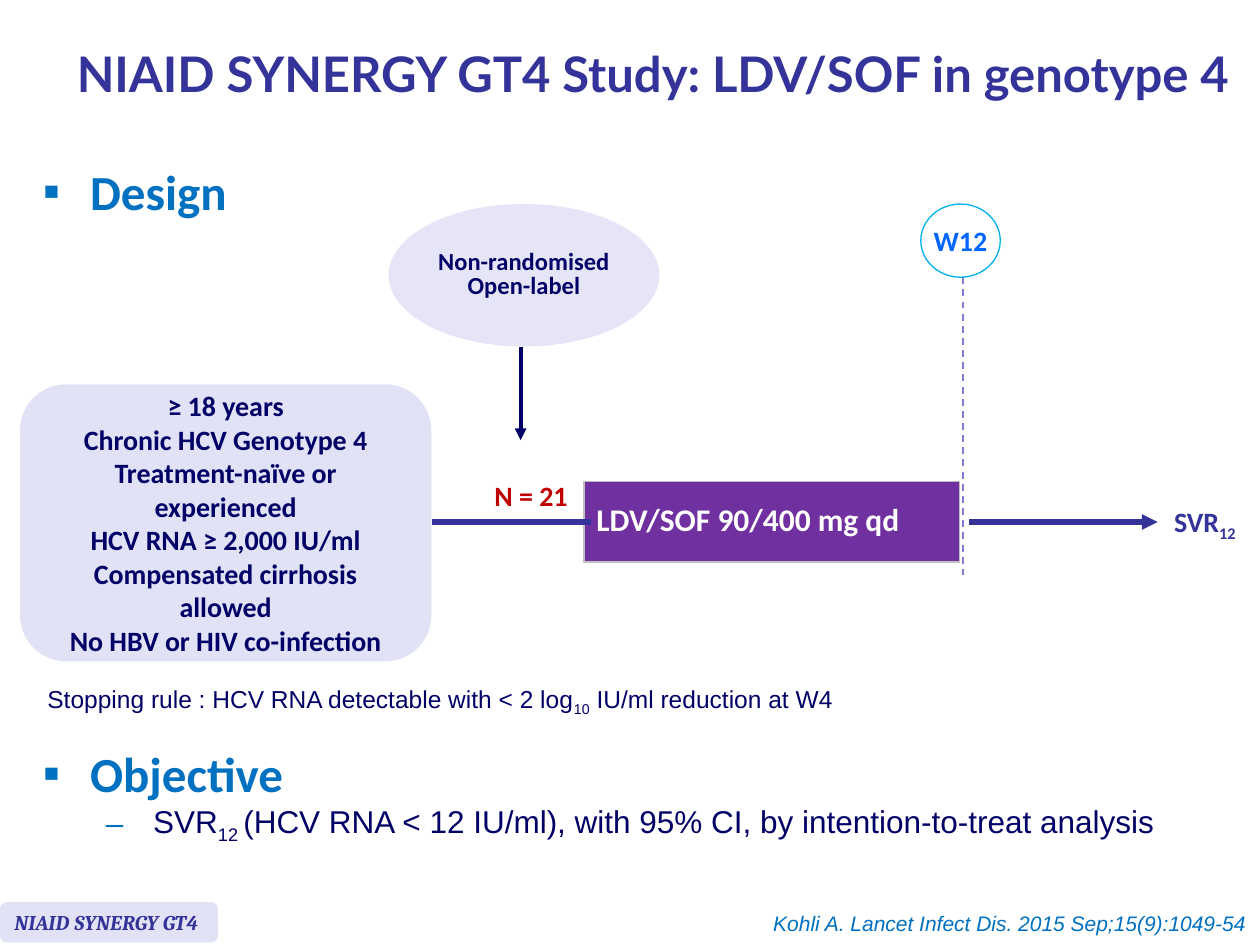
from typing import NamedTuple, Optional

from lxml.etree import SubElement as Sub
from pptx import Presentation
from pptx.dml.color import RGBColor as Color
from pptx.enum.dml import MSO_LINE as Dash
from pptx.enum.shapes import MSO_CONNECTOR as Link, MSO_SHAPE as Kind
from pptx.enum.text import MSO_ANCHOR as Anchor, MSO_AUTO_SIZE as Fit, PP_ALIGN as Align
from pptx.oxml.ns import qn
from pptx.util import Pt

NAVY, INDIGO, BLUE = "000066", "333399", "0070C0"
PALE, WHITE = "E2E2F6", "FFFFFF"


class Box(NamedTuple):
    left: float
    top: float
    width: float
    height: float


class Node(NamedTuple):
    kind: Kind
    box: Box
    fill: str
    text: str
    look: dict
    edge: Optional[str] = None
    wrap: bool = False


class Label(NamedTuple):
    box: Box
    text: str
    look: dict


class Line(NamedTuple):
    start: tuple
    end: tuple
    color: str
    width: float
    head: bool = False
    dash: bool = False


def rgb(code: str) -> Color:
    return Color.from_string(code)


def place(shape, box: Box) -> None:
    shape.left, shape.top, shape.width, shape.height = map(Pt, box)


def write(frame, text: str, *, size: float, color: str, font: str = "Calibri",
          bold: bool = False, italic: bool = False, align=Align.LEFT,
          pitch=None, bullet: str = "", level: int = 0, indent: float = 0,
          more: bool = False) -> None:
    for i, part in enumerate(text.split("\n")):
        para = frame.add_paragraph() if more or i else frame.paragraphs[0]
        para.level, para.alignment = level, align
        para.space_before = Pt(0)
        if pitch:
            para.line_spacing = pitch
        if bullet:
            props = para._p.get_or_add_pPr()
            props.set("marL", str(Pt(indent)))
            props.set("indent", str(-Pt(27)))
            tint = Sub(props, qn("a:buClr"))
            Sub(tint, qn("a:srgbClr"), val=BLUE)
            Sub(props, qn("a:buChar"), char=bullet)
        for j, piece in enumerate(text_runs := part.split("_")):
            if not piece:
                continue
            run = para.add_run()
            run.text = piece
            style = run.font
            style.name, style.size = font, Pt(size)
            style.bold, style.italic = bold, italic
            style.color.rgb = rgb(color)
            if j % 2:
                style._element.set("baseline", "-25000")


def frame_of(shape, wrap: bool, anchor=Anchor.TOP):
    frame = shape.text_frame
    frame.word_wrap, frame.auto_size = wrap, Fit.NONE
    frame.vertical_anchor = anchor
    return frame


def draw_node(slide, node: Node) -> None:
    shape = slide.shapes.add_shape(node.kind, *map(Pt, node.box))
    shape.shadow.inherit = False
    shape.fill.solid()
    shape.fill.fore_color.rgb = rgb(node.fill)
    if node.edge:
        shape.line.color.rgb = rgb(node.edge)
        shape.line.width = Pt(0.75)
    else:
        shape.line.fill.background()
    write(frame_of(shape, node.wrap, Anchor.MIDDLE), node.text, **node.look)


def draw_label(slide, label: Label) -> None:
    shape = slide.shapes.add_textbox(*map(Pt, label.box))
    write(frame_of(shape, False), label.text, **label.look)


def draw_line(slide, item: Line) -> None:
    link = slide.shapes.add_connector(Link.STRAIGHT, *map(Pt, item.start + item.end))
    link.line.color.rgb = rgb(item.color)
    link.line.width = Pt(item.width)
    if item.dash:
        link.line.dash_style = Dash.DASH
    if item.head:
        Sub(link.line._get_or_add_ln(), qn("a:tailEnd"), type="triangle")
    Sub(link._element.spPr, qn("a:effectLst"))


def draw_arm(slide, box: Box, text: str) -> None:
    table = slide.shapes.add_table(1, 1, *map(Pt, box)).table
    table.first_row = table.horz_banding = False
    cell = table.cell(0, 0)
    cell.vertical_anchor = Anchor.MIDDLE
    props = cell._tc.get_or_add_tcPr()
    for side in ("lnL", "lnR", "lnT", "lnB"):
        edge = Sub(props, qn(f"a:{side}"), w=str(Pt(1)))
        Sub(Sub(edge, qn("a:solidFill")), qn("a:srgbClr"), val="C0C0C0")
    cell.fill.solid()
    cell.fill.fore_color.rgb = rgb("7030A0")
    write(cell.text_frame, text, size=18, color=WHITE, bold=True, pitch=0.8)


def main() -> None:
    deck = Presentation()
    deck.slide_width, deck.slide_height = Pt(720), Pt(540)
    slide = deck.slides.add_slide(deck.slide_layouts[3])
    title, design, goal = list(slide.placeholders)[:3]
    for spare in list(slide.placeholders)[3:]:
        spare._element.getparent().remove(spare._element)

    place(title, Box(36.7, 5.8, 683.3, 77))
    write(frame_of(title, True, Anchor.MIDDLE),
          "NIAID SYNERGY GT4 Study: LDV/SOF in genotype 4",
          size=28, color=INDIGO, font="Lato", bold=True, pitch=0.85)
    head = dict(size=28, color=BLUE, bold=True, bullet="▪", indent=27)
    place(design, Box(17.3, 88.6, 142.6, 45.4))
    write(frame_of(design, True), "Design", **head)
    place(goal, Box(17.3, 421.2, 681, 69.8))
    frame = frame_of(goal, True)
    write(frame, "Objective", **head)
    write(frame, "SVR_12 _(HCV RNA < 12 IU/ml), with 95% CI, by intention-to-treat analysis",
          size=18, color=NAVY, font="Arial", bullet="–", level=1, indent=63, more=True)

    axis = 298.3
    draw_arm(slide, Box(333.6, 275.2, 214.6, 46), "LDV/SOF 90/400 mg qd")
    for item in (
        Line((297.5, 198), (297.5, 251.5), NAVY, 2.25, head=True),
        Line((550.2, 158.4), (550.2, 328.5), "7E7ED4", 1, dash=True),
        Line((553.8, axis), (661.5, axis), INDIGO, 3, head=True),
        Line((247, axis), (337.5, axis), INDIGO, 3),
    ):
        draw_line(slide, item)

    mid = dict(size=16, color=NAVY, bold=True, align=Align.CENTER)
    for node in (
        Node(Kind.OVAL, Box(222, 116.6, 154.8, 81.4), "E5E5F7",
             "Non-randomised\nOpen-label", {**mid, "size": 14, "pitch": Pt(14)}),
        Node(Kind.OVAL, Box(526.2, 116.6, 45.4, 41.8), WHITE, "W12",
             {**mid, "color": "0066FF"}, edge="00B0F0"),
        Node(Kind.ROUNDED_RECTANGLE, Box(0, 515.5, 124.6, 23), PALE, "NIAID SYNERGY GT4",
             dict(size=12, color=INDIGO, font="Cambria", bold=True, italic=True)),
        Node(Kind.ROUNDED_RECTANGLE, Box(11.5, 219.6, 235, 158.4), PALE,
             "≥ 18 years\nChronic HCV Genotype 4\nTreatment-naïve or experienced\n"
             "HCV RNA ≥ 2,000 IU/ml\nCompensated cirrhosis allowed\n"
             "No HBV or HIV co-infection", mid, wrap=True),
    ):
        draw_node(slide, node)

    for label in (
        Label(Box(275, 270, 57, 26.6), "N = 21", {**mid, "color": "C00000"}),
        Label(Box(663.8, 285, 51.8, 26.6), "SVR_12_", dict(size=16, color=INDIGO, bold=True)),
        Label(Box(432.7, 517, 286.6, 21.6),
              "Kohli A. Lancet Infect Dis. 2015 Sep;15(9):1049-54",
              dict(size=12, color=BLUE, font="Arial", italic=True, align=Align.RIGHT)),
        Label(Box(20, 387.4, 473, 24.5),
              "Stopping rule : HCV RNA detectable with < 2 log_10_ IU/ml reduction at W4",
              dict(size=14, color=NAVY, font="Arial")),
    ):
        draw_label(slide, label)

    deck.save("out.pptx")


if __name__ == "__main__":
    main()
